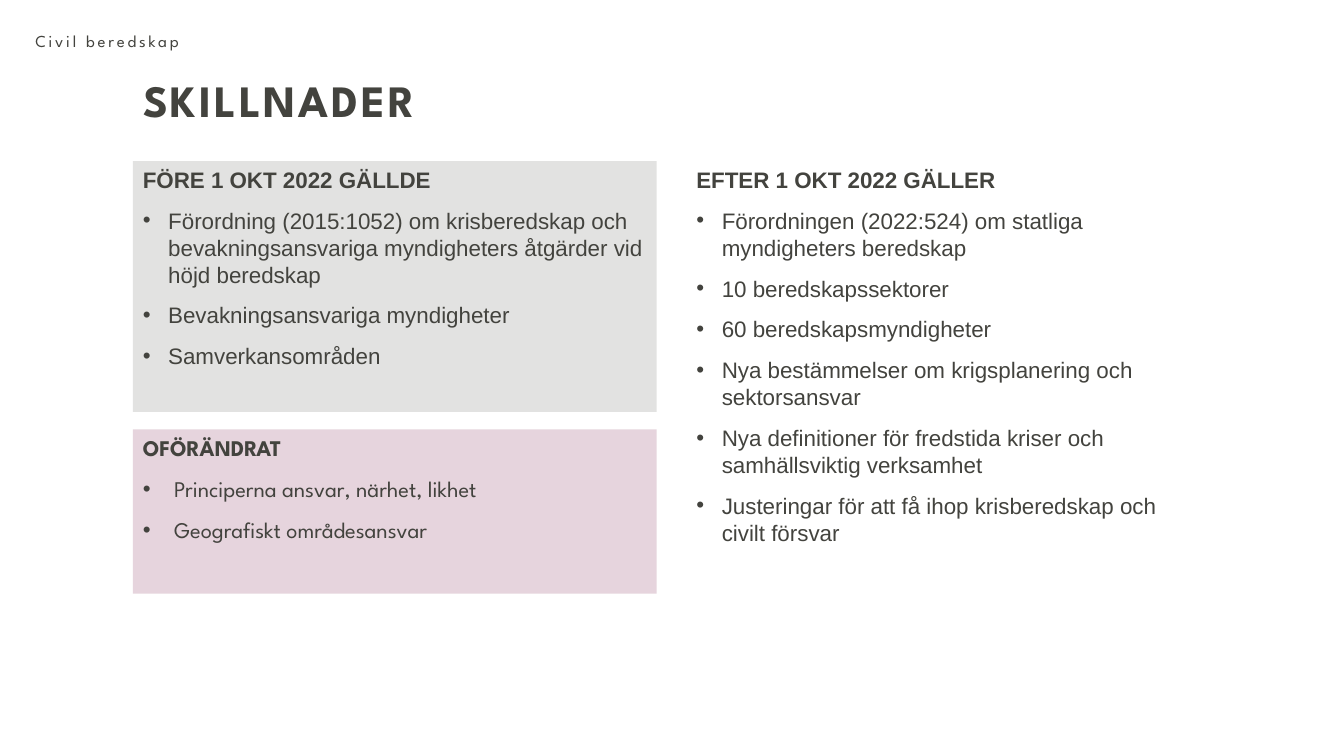
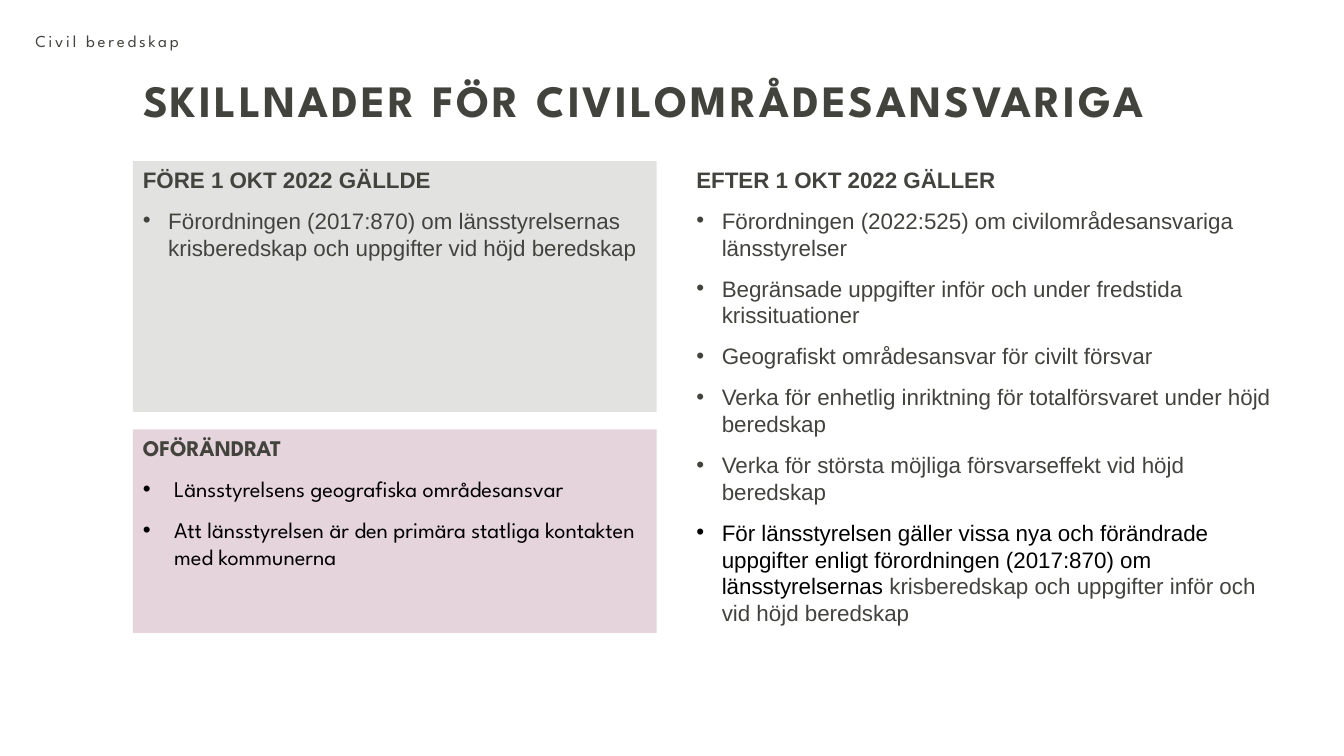
from lxml.etree import SubElement
from pptx import Presentation
from pptx.dml.color import RGBColor
from pptx.enum.shapes import MSO_SHAPE
from pptx.enum.text import MSO_ANCHOR, MSO_AUTO_SIZE, PP_ALIGN
from pptx.oxml.ns import qn
from pptx.util import Cm, Pt

INK, BLACK = "43433E", "000000"
GREY, PINK = "E2E2E1", "E6D4DD"
BODY_FONT, DISPLAY_FONT = "Arial", "League Spartan"
LEFT, RIGHT, TOP, COLUMN_WIDTH = 3.35, 17.3, 4.06, 13.2
BEFORE_HEIGHT, UNCHANGED_TOP = 6.32, 10.82


def colour(value):
    return RGBColor.from_string(value)


class Deck:
    """Shared style and the slide being built."""

    def __init__(self):
        self.presentation = Presentation()
        self.presentation.slide_width = Cm(33.87)
        self.presentation.slide_height = Cm(19.05)
        self.slide = None

    def add_run(self, paragraph, text, font, size, ink=INK, bold=False, spacing=None):
        run = paragraph.add_run()
        run.text = text
        run.font.name, run.font.size, run.font.bold = font, Pt(size), bold
        run.font.color.rgb = colour(ink)
        if spacing:
            run.font._element.set("spc", str(spacing * 100))

    def prepare_frame(self, shape, anchor):
        frame = shape.text_frame
        frame.word_wrap = True
        frame.auto_size = MSO_AUTO_SIZE.NONE
        frame.vertical_anchor = anchor
        frame.paragraphs[0].alignment = PP_ALIGN.LEFT
        return frame

    def start_slide(self, title):
        self.slide = self.presentation.slides.add_slide(self.presentation.slide_layouts[5])
        shape = self.slide.shapes.title
        shape.left, shape.top, shape.width, shape.height = Cm(LEFT), Cm(1.88), Cm(27.15), Cm(1.42)
        paragraph = self.prepare_frame(shape, MSO_ANCHOR.MIDDLE).paragraphs[0]
        paragraph.line_spacing = 0.9
        self.add_run(paragraph, title, DISPLAY_FONT, 32, bold=True, spacing=2)
        self.add_section_label("Civil beredskap")

    def add_section_label(self, text):
        shape = self.slide.shapes.add_textbox(Cm(0.64), Cm(0.64), Cm(21.39), Cm(0.76))
        frame = self.prepare_frame(shape, MSO_ANCHOR.MIDDLE)
        self.add_run(frame.paragraphs[0], text, DISPLAY_FONT, 12, spacing=2)

    def add_panel(self, box, heading, items, fill=None, font=BODY_FONT, indent=0.64):
        """A heading with bullets; each item is a list of (text, colour) runs."""
        lengths = [Cm(value) for value in box]
        if fill:
            shape = self.slide.shapes.add_shape(MSO_SHAPE.RECTANGLE, *lengths)
            shape.shadow.inherit = False
            shape.fill.solid()
            shape.fill.fore_color.rgb = colour(fill)
            shape.line.fill.background()
        else:
            shape = self.slide.shapes.add_textbox(*lengths)
        frame = self.prepare_frame(shape, MSO_ANCHOR.TOP)
        frame.paragraphs[0].line_spacing = Pt(19.2)
        self.add_run(frame.paragraphs[0], heading, font, 16, bold=True)
        for runs in items:
            paragraph = frame.add_paragraph()
            self.add_bullet(paragraph, indent)
            paragraph.alignment = PP_ALIGN.LEFT
            paragraph.line_spacing = Pt(19.2)
            paragraph.space_before = Pt(10)
            for text, ink in runs:
                self.add_run(paragraph, text, font, 16, ink)

    def add_bullet(self, paragraph, indent):
        properties = paragraph._p.get_or_add_pPr()
        properties.set("marL", str(Cm(indent)))
        properties.set("indent", str(-Cm(indent)))
        SubElement(properties, qn("a:buFont")).set("typeface", BODY_FONT)
        SubElement(properties, qn("a:buChar")).set("char", "•")

    def add_comparison(self, title, before, after, after_size, unchanged, unchanged_height):
        self.start_slide(title)
        self.add_panel((LEFT, TOP, COLUMN_WIDTH, BEFORE_HEIGHT),
                       "FÖRE 1 OKT 2022 GÄLLDE", before, GREY)
        self.add_panel((RIGHT, TOP, *after_size), "EFTER 1 OKT 2022 GÄLLER", after)
        self.add_panel((LEFT, UNCHANGED_TOP, COLUMN_WIDTH, unchanged_height),
                       "OFÖRÄNDRAT", unchanged, PINK, DISPLAY_FONT, 0.79)


def plain(*texts, ink=INK):
    return [[(text, ink)] for text in texts]


def main():
    deck = Deck()

    # Differences in general
    deck.add_comparison(
        "SKILLNADER",
        before=plain(
            "Förordning (2015:1052) om krisberedskap och bevakningsansvariga "
            "myndigheters åtgärder vid höjd beredskap",
            "Bevakningsansvariga myndigheter",
            "Samverkansområden"),
        after=plain(
            "Förordningen (2022:524) om statliga myndigheters beredskap",
            "10 beredskapssektorer",
            "60 beredskapsmyndigheter",
            "Nya bestämmelser om krigsplanering och sektorsansvar",
            "Nya definitioner för fredstida kriser och samhällsviktig verksamhet",
            "Justeringar för att få ihop krisberedskap och civilt försvar"),
        after_size=(COLUMN_WIDTH, 11.4),
        unchanged=plain("Principerna ansvar, närhet, likhet", "Geografiskt områdesansvar"),
        unchanged_height=4.14)

    # Differences for county boards in charge of a civil area
    deck.add_comparison(
        "SKILLNADER FÖR CIVILOMRÅDESANSVARIGA",
        before=plain(
            "Förordningen (2017:870) om länsstyrelsernas krisberedskap och "
            "uppgifter vid höjd beredskap"),
        after=plain(
            "Förordningen (2022:525) om civilområdesansvariga länsstyrelser",
            "Begränsade uppgifter inför och under fredstida krissituationer",
            "Geografiskt områdesansvar för civilt försvar",
            "Verka för enhetlig inriktning för totalförsvaret under höjd beredskap",
            "Verka för största möjliga försvarseffekt vid höjd beredskap",
        ) + [[
            ("För länsstyrelsen gäller vissa nya och förändrade uppgifter enligt "
             "förordningen (2017:870) om länsstyrelsernas ", BLACK),
            ("krisberedskap och uppgifter inför och vid höjd beredskap", INK)]],
        after_size=(15.01, 13.56),
        unchanged=plain(
            "Länsstyrelsens geografiska områdesansvar",
            "Att länsstyrelsen är den primära statliga kontakten med kommunerna",
            ink=BLACK),
        unchanged_height=5.13)

    deck.presentation.save("out.pptx")


if __name__ == "__main__":
    main()
